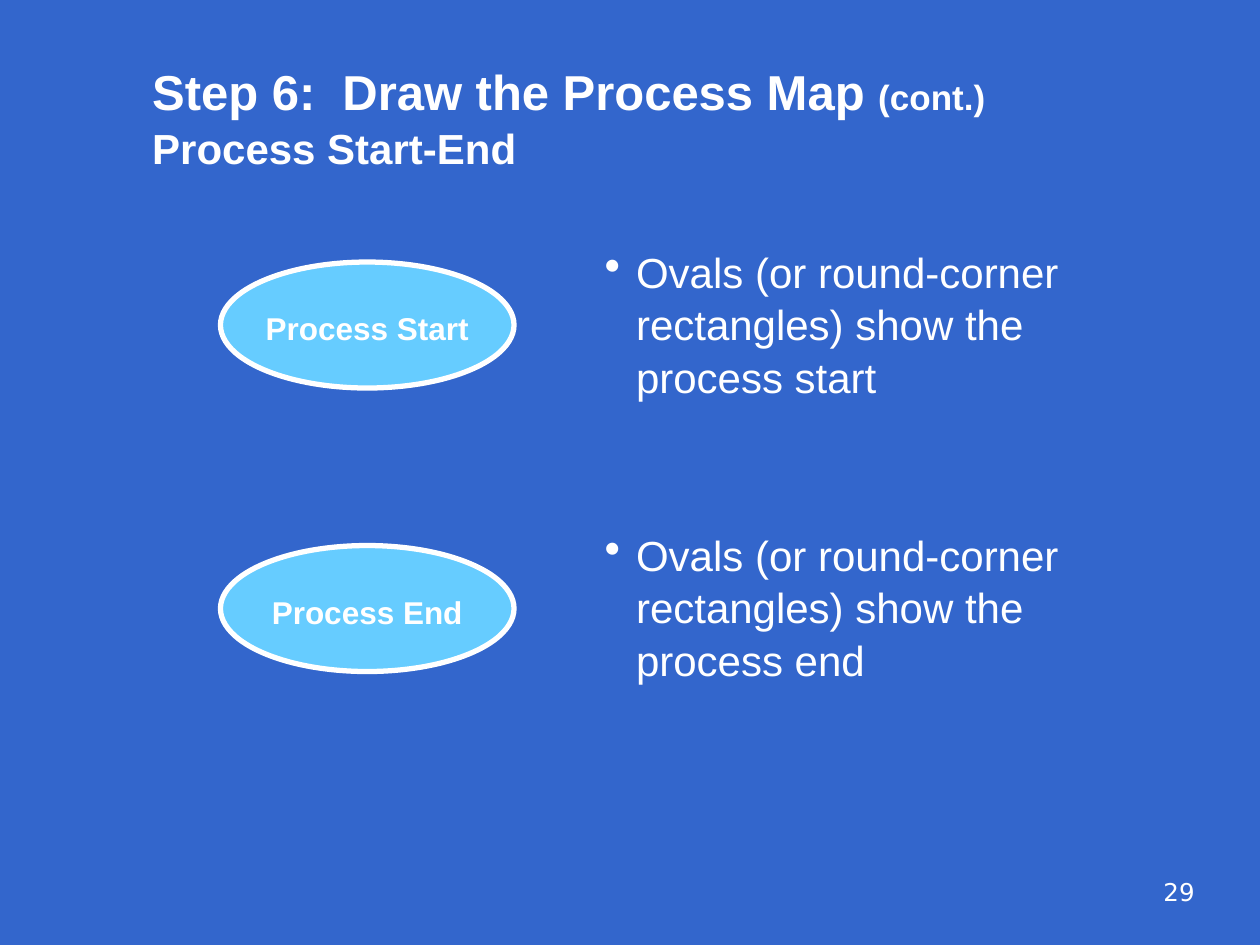
from lxml.etree import SubElement
from pptx import Presentation
from pptx.dml.color import RGBColor
from pptx.enum.shapes import MSO_SHAPE as Shape
from pptx.enum.text import MSO_ANCHOR as Anchor, PP_ALIGN as Align
from pptx.oxml.ns import qn
from pptx.util import Inches, Pt

# Content
TITLE = [("Step 6:  Draw the Process Map ", 28), ("(cont.)", 20)]
SUBTITLE = ("Process Start-End", 24)
STEPS = [
    ("Process Start", "Ovals (or round-corner rectangles) show the process start"),
    ("Process End", "Ovals (or round-corner rectangles) show the process end"),
]
PAGE_NUMBER = "29"

# Look and layout, in inches
COLORS = {"background": "3366CC", "oval": "66CCFF", "text": "FFFFFF"}
FONT = "Arial"
LINE_SPACING = 1.04
OVAL_LEFT, OVAL_TOP, OVAL_WIDTH, OVAL_HEIGHT = 1.75, 2.08, 2.33, 1
ROW_PITCH = 2.25
HANGING = Inches(0.25)


def color(name):
    return RGBColor.from_string(COLORS[name])


def style(font, size, bold=False, name=FONT):
    font.name, font.size, font.bold = name, Pt(size), bold
    font.color.rgb = color("text")


def add_text_frame(left, top, width, height):
    box = slide.shapes.add_textbox(*map(Inches, (left, top, width, height)))
    box.text_frame.word_wrap = True
    return box.text_frame


def add_bullet(paragraph):
    props = paragraph._p.get_or_add_pPr()
    props.set("marL", str(HANGING))
    props.set("indent", str(-HANGING))
    bullet_color = SubElement(props, qn("a:buClr"))
    SubElement(bullet_color, qn("a:srgbClr"), val=COLORS["text"])
    SubElement(props, qn("a:buSzPct"), val="110000")
    SubElement(props, qn("a:buChar"), char="•")


deck = Presentation()
deck.slide_width, deck.slide_height = Inches(10), Inches(7.5)
slide = deck.slides.add_slide(deck.slide_layouts[6])
slide.background.fill.solid()
slide.background.fill.fore_color.rgb = color("background")

# Title and subtitle
title_frame = add_text_frame(1.11, 0.17, 8.5, 1.25)
title_frame.vertical_anchor = Anchor.BOTTOM
heading = title_frame.paragraphs[0]
heading.line_spacing = LINE_SPACING
for words, size in TITLE + [SUBTITLE]:
    if words == SUBTITLE[0]:
        heading.add_line_break()
    run = heading.add_run()
    run.text = words
    style(run.font, size, bold=True)

# Labelled ovals, with one bullet for each
notes_frame = add_text_frame(4.7, 1.89, 4.17, 3.68)
for row, (label, note) in enumerate(STEPS):
    oval = slide.shapes.add_shape(
        Shape.OVAL, Inches(OVAL_LEFT), Inches(OVAL_TOP + row * ROW_PITCH),
        Inches(OVAL_WIDTH), Inches(OVAL_HEIGHT))
    oval.shadow.inherit = False
    oval.fill.solid()
    oval.fill.fore_color.rgb = color("oval")
    oval.line.color.rgb = color("text")
    oval.line.width = Pt(3)
    label_frame = oval.text_frame
    label_frame.word_wrap = False
    label_frame.vertical_anchor = Anchor.MIDDLE
    label_frame.margin_top, label_frame.margin_bottom = Inches(0.05), 0
    caption = label_frame.paragraphs[0]
    caption.text = label
    caption.alignment = Align.CENTER
    style(caption.font, 18, bold=True)

    bullet = notes_frame.add_paragraph() if row else notes_frame.paragraphs[0]
    bullet.text = note
    bullet.line_spacing = LINE_SPACING
    if row:
        bullet.space_before = Pt(72)
    add_bullet(bullet)
    style(bullet.font, 24)

# Page number
page = add_text_frame(7.5, 6.91, 2.08, 0.5).paragraphs[0]
page.text = PAGE_NUMBER
page.alignment = Align.RIGHT
style(page.font, 14, name="DejaVu Sans")

deck.save("out.pptx")
